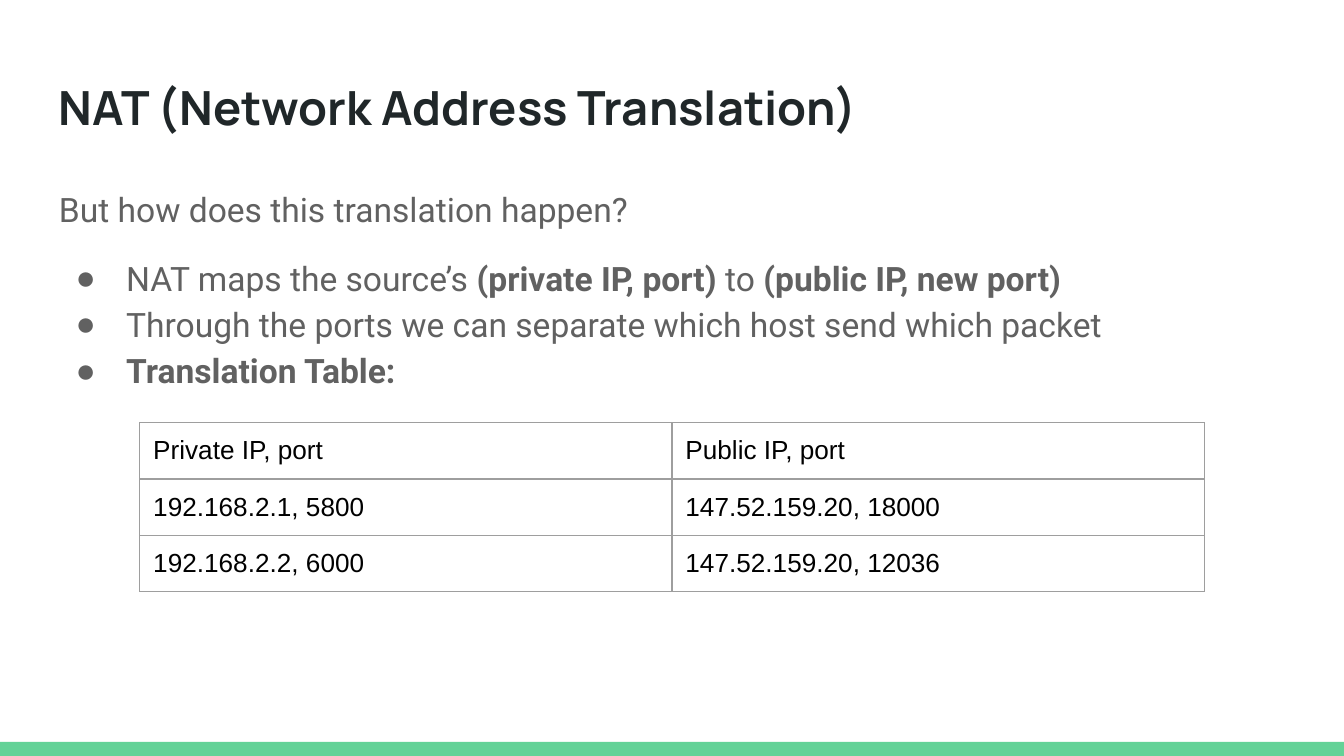
from dataclasses import dataclass
from typing import Any

from lxml import etree
from pptx import Presentation
from pptx.dml.color import RGBColor
from pptx.enum.shapes import MSO_SHAPE
from pptx.enum.text import MSO_ANCHOR
from pptx.oxml.ns import qn
from pptx.util import Pt

RECTANGLE = MSO_SHAPE.RECTANGLE
TOP = MSO_ANCHOR.TOP
MIDDLE = MSO_ANCHOR.MIDDLE

EMU_PER_PX = 4572
SLIDE_WIDTH, SLIDE_HEIGHT = 2000, 1125
MARGIN, CELL_BOTTOM_MARGIN = 20, 16
BULLET_INDENT, BULLET_HANGING = 100, 75
BULLET_FONT = "Arial"
ROW_HEIGHT = 84
FOOTER_HEIGHT = 21

WHITE = RGBColor(0xFF, 0xFF, 0xFF)
GREEN = RGBColor(0x63, 0xD2, 0x97)
INK = RGBColor(0x20, 0x27, 0x29)
GREY = RGBColor(0x61, 0x61, 0x61)
BORDER = RGBColor(0x9E, 0x9E, 0x9E)
BLACK = RGBColor(0, 0, 0)


@dataclass(frozen=True)
class Box:
    left: int
    top: int
    width: int
    height: int

    def emu(self) -> tuple[int, ...]:
        return tuple(px(n) for n in (self.left, self.top, self.width, self.height))


@dataclass(frozen=True)
class TextStyle:
    font: str
    size: float
    color: RGBColor
    bold: bool = False


@dataclass(frozen=True)
class Run:
    text: str
    bold: bool = False


@dataclass(frozen=True)
class Line:
    runs: tuple[Run, ...]
    bullet: bool = False
    format: tuple[tuple[str, Any], ...] = ()


TITLE_STYLE = TextStyle("Manrope", 25.2, INK, True)
BODY_STYLE = TextStyle("Roboto", 18, GREY)
TABLE_STYLE = TextStyle("Arial", 14, BLACK)

TITLE_BOX = Box(68, 97, 1864, 125)
BODY_BOX = Box(68, 252, 1864, 747)
FOOTER_BOX = Box(0, SLIDE_HEIGHT - FOOTER_HEIGHT, SLIDE_WIDTH, FOOTER_HEIGHT)

BODY_LINES = (
    Line((Run("But how does this translation happen?"),)),
    Line(
        (
            Run("NAT maps the source’s "),
            Run("(private IP, port)", True),
            Run(" to "),
            Run("(public IP, new port)", True),
        ),
        True,
        (("space_before", Pt(12)),),
    ),
    Line((Run("Through the ports we can separate which host send which packet"),), True),
    Line((Run("Translation Table:", True),), True),
)
TRANSLATIONS = (
    ("Private IP, port", "Public IP, port"),
    ("192.168.2.1, 5800", "147.52.159.20, 18000"),
    ("192.168.2.2, 6000", "147.52.159.20, 12036"),
)
TABLE_BOX = Box(208, 629, 1584, ROW_HEIGHT * len(TRANSLATIONS))


def px(length: int) -> int:
    return length * EMU_PER_PX


def apply(target: Any, values: dict[str, Any]) -> None:
    for name, value in values.items():
        setattr(target, name, value)


def margins(bottom: int = MARGIN) -> dict[str, int]:
    sides = {f"margin_{side}": px(MARGIN) for side in ("left", "right", "top")}
    return {**sides, "margin_bottom": px(bottom)}


def add_run(paragraph: Any, text: str, style: TextStyle, bold: bool) -> None:
    run = paragraph.add_run()
    run.text = text
    apply(run.font, {"name": style.font, "size": Pt(style.size), "bold": bold})
    run.font.color.rgb = style.color


def add_bullet(paragraph: Any, style: TextStyle) -> None:
    properties = paragraph._p.get_or_add_pPr()
    properties.set("marL", str(px(BULLET_INDENT)))
    properties.set("indent", str(-px(BULLET_HANGING)))
    color = etree.SubElement(properties, qn("a:buClr"))
    etree.SubElement(color, qn("a:srgbClr"), val=str(style.color))
    etree.SubElement(properties, qn("a:buFont"), typeface=BULLET_FONT)
    etree.SubElement(properties, qn("a:buChar"), char="●")


def add_text(
    slide: Any, box: Box, lines: tuple[Line, ...], style: TextStyle, anchor: Any, spacing: float
) -> None:
    frame = slide.shapes.add_textbox(*box.emu()).text_frame
    apply(frame, {"word_wrap": True, "vertical_anchor": anchor, **margins()})
    for index, line in enumerate(lines):
        paragraph = frame.add_paragraph() if index else frame.paragraphs[0]
        apply(paragraph, {"line_spacing": spacing, **dict(line.format)})
        if line.bullet:
            add_bullet(paragraph, style)
        for run in line.runs:
            add_run(paragraph, run.text, style, run.bold or style.bold)


def add_borders(cell: Any) -> None:
    properties = cell._tc.get_or_add_tcPr()
    for side in ("lnL", "lnR", "lnT", "lnB"):
        border = etree.SubElement(properties, qn(f"a:{side}"), w=str(Pt(0.75)))
        fill = etree.SubElement(border, qn("a:solidFill"))
        etree.SubElement(fill, qn("a:srgbClr"), val=str(BORDER))


def add_translation_table(slide: Any) -> None:
    table = slide.shapes.add_table(
        len(TRANSLATIONS), len(TRANSLATIONS[0]), *TABLE_BOX.emu()
    ).table
    apply(table, {"first_row": False, "horz_banding": False})
    for row, texts in enumerate(TRANSLATIONS):
        for column, text in enumerate(texts):
            cell = table.cell(row, column)
            apply(cell, margins(CELL_BOTTOM_MARGIN))
            add_borders(cell)
            cell.fill.background()
            add_run(cell.text_frame.paragraphs[0], text, TABLE_STYLE, False)


def add_footer(slide: Any) -> None:
    footer = slide.shapes.add_shape(RECTANGLE, *FOOTER_BOX.emu())
    footer.shadow.inherit = False
    footer.fill.solid()
    footer.fill.fore_color.rgb = GREEN
    footer.line.fill.background()


def main() -> None:
    presentation = Presentation()
    apply(presentation, {"slide_width": px(SLIDE_WIDTH), "slide_height": px(SLIDE_HEIGHT)})
    slide = presentation.slides.add_slide(presentation.slide_layouts[6])
    slide.background.fill.solid()
    slide.background.fill.fore_color.rgb = WHITE
    add_footer(slide)
    title = (Line((Run("NAT (Network Address Translation)"),)),)
    add_text(slide, TITLE_BOX, title, TITLE_STYLE, MIDDLE, 1.0)
    add_text(slide, BODY_BOX, BODY_LINES, BODY_STYLE, TOP, 1.15)
    add_translation_table(slide)
    presentation.save("out.pptx")


if __name__ == "__main__":
    main()
